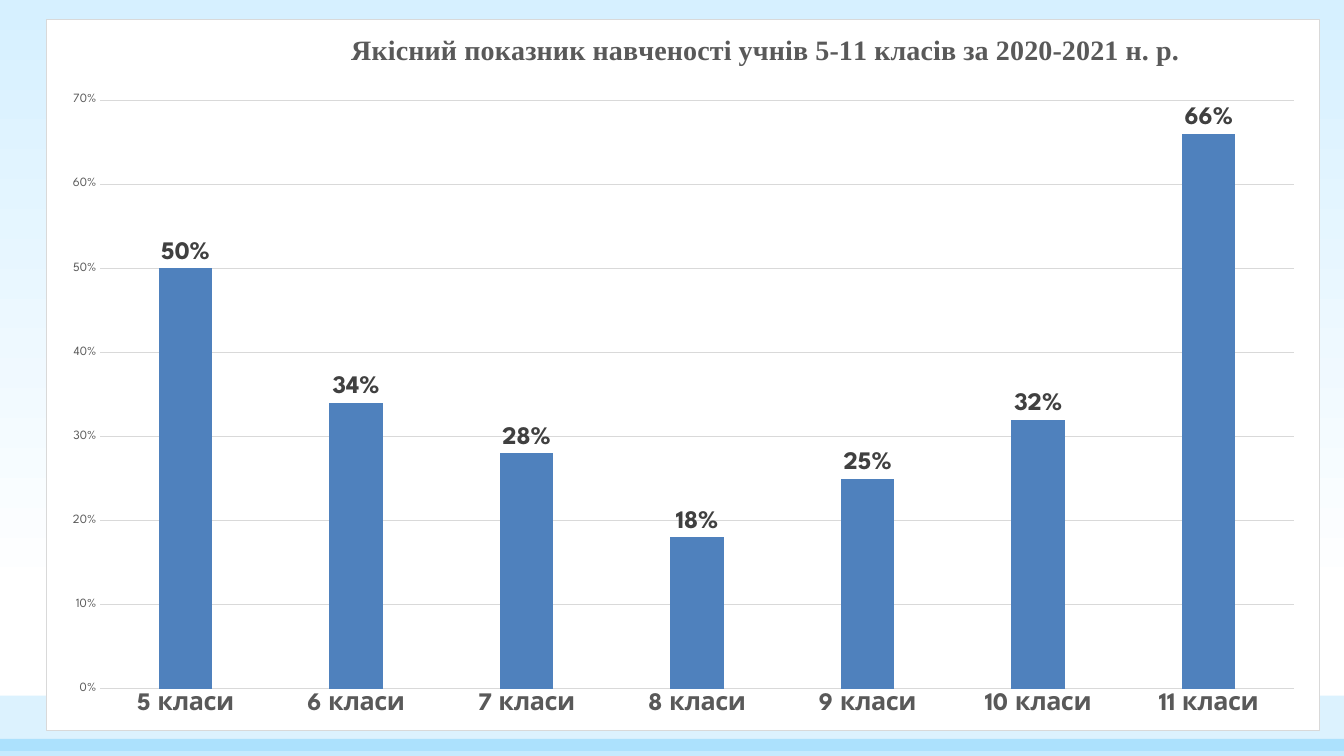
"""Build a slide with a column chart of pupils' quality indicators by class."""
from lxml import etree
from pptx import Presentation
from pptx.chart.data import CategoryChartData
from pptx.dml.color import RGBColor
from pptx.enum.chart import XL_CHART_TYPE, XL_LABEL_POSITION, XL_TICK_MARK
from pptx.enum.shapes import MSO_SHAPE
from pptx.oxml import parse_xml
from pptx.oxml.ns import nsdecls, qn
from pptx.util import Inches, Pt

WHITE = RGBColor(0xFF, 0xFF, 0xFF)
BLACK = RGBColor(0x00, 0x00, 0x00)
SKY_BLUE = RGBColor(0xD6, 0xF0, 0xFF)
BAND_BLUE = RGBColor(0x31, 0xB6, 0xFD)
BAR_BLUE = RGBColor(0x4F, 0x81, 0xBD)
LABEL_GREY = RGBColor(0x40, 0x40, 0x40)
TEXT_GREY = RGBColor(0x59, 0x59, 0x59)
LINE_GREY = RGBColor(0xD9, 0xD9, 0xD9)

TITLE = "Якісний показник навченості учнів 5-11 класів за 2020-2021 н. р."
FIRST_CLASS = 5
SHARES = [0.50, 0.34, 0.28, 0.18, 0.25, 0.32, 0.66]
CLASSES = [f"{number} класи" for number, _ in enumerate(SHARES, FIRST_CLASS)]

SLIDE_WIDTH, SLIDE_HEIGHT = 13.33, 7.5
CHART_LEFT, CHART_TOP, CHART_WIDTH, CHART_HEIGHT = 0.46, 0.19, 12.63, 7.06
TITLE_PLACE = {"x": 2.97, "y": 0.07}
PLOT_PLACE = {"x": 0.53, "y": 0.8, "w": 11.85, "h": 5.85}
CHART_SPANS = {"x": CHART_WIDTH, "y": CHART_HEIGHT, "w": CHART_WIDTH, "h": CHART_HEIGHT}
BACKGROUND_STOPS = [(0, SKY_BLUE), (0.79, WHITE)]
BANDS = [
    {"top": 6.9, "height": 0.55, "opacity": 17},
    {"top": 7.33, "height": 0.17, "opacity": 28},
]

CHART_FONT = "League Spartan"
TITLE_FONT = "Times New Roman"
PERCENT = "0%"
LINE_WIDTH = Pt(0.75)
COLUMNS = XL_CHART_TYPE.COLUMN_CLUSTERED
OUTSIDE_END = XL_LABEL_POSITION.OUTSIDE_END
NO_TICK = XL_TICK_MARK.NONE
RECTANGLE = MSO_SHAPE.RECTANGLE


def set_font(font, size, color, bold=False, name=CHART_FONT):
    font.size, font.bold, font.name = Pt(size), bold, name
    font.color.rgb = color


def set_fill(fill, color):
    fill.solid()
    fill.fore_color.rgb = color


def set_line(line):
    line.color.rgb = LINE_GREY
    line.width = LINE_WIDTH


def set_percent(labels):
    labels.number_format = PERCENT
    labels.number_format_is_linked = False


def set_layout(parent, index, place, **settings):
    for old in parent.findall(qn("c:layout")):
        parent.remove(old)
    layout = parse_xml(f"<c:layout {nsdecls('c')}><c:manualLayout/></c:layout>")
    settings.update(xMode="edge", yMode="edge")
    settings.update({key: length / CHART_SPANS[key] for key, length in place.items()})
    for tag, value in settings.items():
        etree.SubElement(layout[0], qn(f"c:{tag}")).set("val", str(value))
    parent.insert(index, layout)


def paint_background(page):
    fill = page.background.fill
    fill.gradient()
    fill.gradient_angle = 270
    for stop, (position, color) in zip(fill.gradient_stops, BACKGROUND_STOPS):
        stop.position = position
        stop.color.rgb = color


def add_band(page, top, height, opacity):
    place = [Inches(length) for length in (0, top, SLIDE_WIDTH, height)]
    band = page.shapes.add_shape(RECTANGLE, *place)
    band.shadow.inherit = False
    set_fill(band.fill, BAND_BLUE)
    band.line.fill.background()
    color = band.element.spPr.find(f".//{qn('a:srgbClr')}")
    etree.SubElement(color, qn("a:alpha")).set("val", str(opacity * 1000))


def add_chart(page):
    data = CategoryChartData(number_format=PERCENT)
    data.categories = CLASSES
    data.add_series("Series 1", SHARES)
    frame = (CHART_LEFT, CHART_TOP, CHART_WIDTH, CHART_HEIGHT)
    place = [Inches(length) for length in frame]
    chart = page.shapes.add_chart(COLUMNS, *place, data).chart
    set_font(chart.font, 10, BLACK)
    chart.has_legend = False
    return chart


def style_frame(chart):
    frame = parse_xml(
        f"<c:spPr {nsdecls('c', 'a')}>"
        f'<a:solidFill><a:srgbClr val="{WHITE}"/></a:solidFill>'
        f'<a:ln w="{LINE_WIDTH}"><a:solidFill><a:srgbClr val="{LINE_GREY}"/></a:solidFill></a:ln>'
        "</c:spPr>"
    )
    chart.element.find(qn("c:txPr")).addprevious(frame)


def style_title(chart):
    title = chart.chart_title
    para = title.text_frame.paragraphs[0]
    para.text = TITLE
    set_font(para.font, 20, TEXT_GREY, True, TITLE_FONT)
    title.include_in_layout = False
    set_layout(title.element, 1, TITLE_PLACE)


def style_axes(chart):
    class_axis, share_axis = chart.category_axis, chart.value_axis
    for axis, size, bold in [(class_axis, 18, True), (share_axis, 9, False)]:
        axis.major_tick_mark = axis.minor_tick_mark = NO_TICK
        set_font(axis.tick_labels.font, size, TEXT_GREY, bold)
    share_axis.minimum_scale, share_axis.maximum_scale = 0, 0.7
    share_axis.major_unit = 0.1
    share_axis.format.line.fill.background()
    set_percent(share_axis.tick_labels)
    for line in (class_axis.format.line, share_axis.major_gridlines.format.line):
        set_line(line)


def style_columns(chart):
    plot = chart.plots[0]
    plot.gap_width = 219
    plot.vary_by_categories = False
    series = plot.series[0]
    set_fill(series.format.fill, BAR_BLUE)
    labels = series.data_labels
    labels.show_value = True
    labels.position = OUTSIDE_END
    set_percent(labels)
    set_font(labels.font, 18, LABEL_GREY, True)
    plot_area = chart.element.find(f".//{qn('c:plotArea')}")
    set_layout(plot_area, 0, PLOT_PLACE, layoutTarget="inner")


def main():
    deck = Presentation()
    deck.slide_width, deck.slide_height = Inches(SLIDE_WIDTH), Inches(SLIDE_HEIGHT)
    page = deck.slides.add_slide(deck.slide_layouts[6])
    paint_background(page)
    for band in BANDS:
        add_band(page, **band)
    chart = add_chart(page)
    for style in (style_frame, style_title, style_axes, style_columns):
        style(chart)
    deck.save("out.pptx")


if __name__ == "__main__":
    main()
